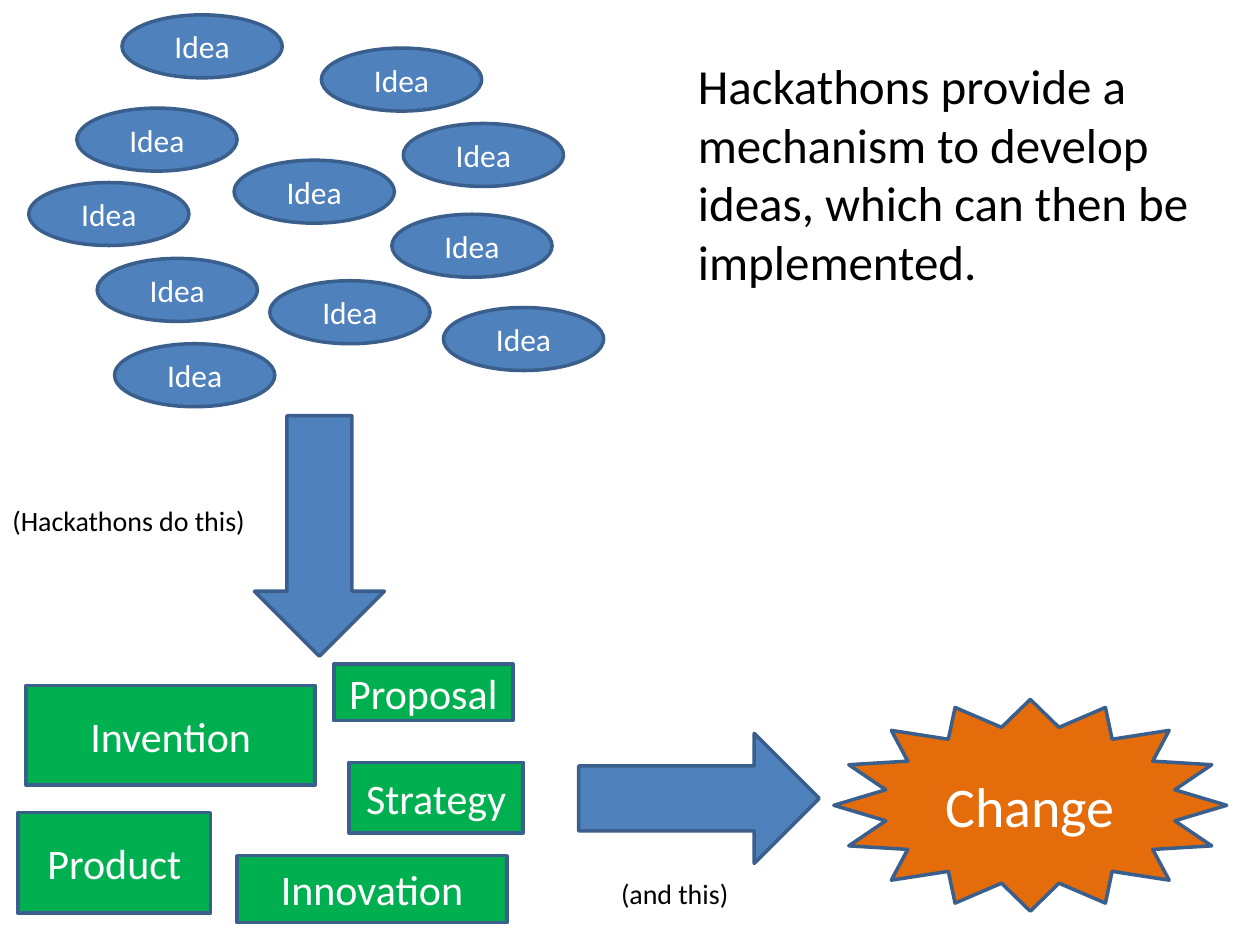
from dataclasses import dataclass

from pptx import Presentation
from pptx.dml.color import RGBColor as Rgb
from pptx.enum.shapes import MSO_SHAPE as Kind
from pptx.enum.text import MSO_ANCHOR as Anchor, MSO_AUTO_SIZE as Fit, PP_ALIGN as Align
from pptx.util import Cm, Pt


@dataclass(frozen=True)
class Theme:
    font: str = "Calibri"
    blue: str = "4F81BD"
    edge: str = "3A5F8C"
    green: str = "00B050"
    orange: str = "E46C0A"
    white: str = "FFFFFF"
    black: str = "000000"
    note: int = 16
    idea: int = 18
    result: int = 24
    claim: int = 28
    change: int = 32
    line: int = 2


class Board:
    def __init__(self, slide, theme):
        self.slide = slide
        self.theme = theme

    def letter(self, frame, text, size, color, align):
        frame.word_wrap = True
        para = frame.paragraphs[0]
        para.text = text
        para.alignment = align
        para.font.name = self.theme.font
        para.font.size = Pt(size)
        para.font.color.rgb = Rgb.from_string(color)

    def shape(self, kind, box, fill, text="", size=18):
        item = self.slide.shapes.add_shape(kind, *map(Cm, box))
        item.shadow.inherit = False
        item.fill.solid()
        item.fill.fore_color.rgb = Rgb.from_string(fill)
        item.line.color.rgb = Rgb.from_string(self.theme.edge)
        item.line.width = Pt(self.theme.line)
        if text:
            item.text_frame.vertical_anchor = Anchor.MIDDLE
            self.letter(item.text_frame, text, size, self.theme.white, Align.CENTER)
        return item

    def idea(self, left, top):
        box = (left, top, 3.23, 1.27)
        self.shape(Kind.OVAL, box, self.theme.blue, "Idea", self.theme.idea)

    def arrow(self, left, top, turn=0):
        box = (left, top, 2.62, 4.85)
        self.shape(Kind.DOWN_ARROW, box, self.theme.blue).rotation = turn

    def result(self, text, *box):
        self.shape(Kind.RECTANGLE, box, self.theme.green, text, self.theme.result)

    def burst(self, text, *box):
        self.shape(Kind.STAR_16_POINT, box, self.theme.orange, text, self.theme.change)

    def label(self, text, size, *box):
        frame = self.slide.shapes.add_textbox(*map(Cm, box)).text_frame
        self.letter(frame, text, size, self.theme.black, Align.LEFT)
        frame.auto_size = Fit.SHAPE_TO_FIT_TEXT


IDEAS = [
    (1.55, 2.18), (6.48, 0.97), (0.58, 3.68), (4.72, 3.23),
    (8.13, 2.49), (2.31, 6.93), (7.9, 4.32), (2.46, 0.3),
    (8.94, 6.2), (5.44, 5.66), (1.96, 5.21),
]
RESULTS = [
    ("Invention", 0.53, 13.82, 5.82, 2.01),
    ("Proposal", 6.73, 13.39, 3.61, 1.14),
    ("Product", 0.36, 16.38, 3.89, 2.03),
    ("Innovation", 4.78, 17.25, 5.44, 1.35),
    ("Strategy", 7.04, 15.37, 3.51, 1.42),
]
CLAIM = "Hackathons provide a mechanism to develop ideas, which can then be implemented."


def main():
    deck = Presentation()
    deck.slide_width, deck.slide_height = Cm(25.4), Cm(19.05)
    theme = Theme()
    board = Board(deck.slides.add_slide(deck.slide_layouts[6]), theme)
    for spot in IDEAS:
        board.idea(*spot)
    board.arrow(5.13, 8.38)
    for item in RESULTS:
        board.result(*item)
    board.arrow(12.78, 13.67, 270)
    board.burst("Change", 16.81, 14.1, 7.92, 4.27)
    board.label(CLAIM, theme.claim, 13.82, 0.99, 11.13, 5.05)
    board.label("(Hackathons do this)", theme.note, 0, 10.03, 6.07, 0.94)
    board.label("(and this)", theme.note, 12.27, 17.55, 2.95, 0.94)
    deck.save("out.pptx")


if __name__ == "__main__":
    main()
